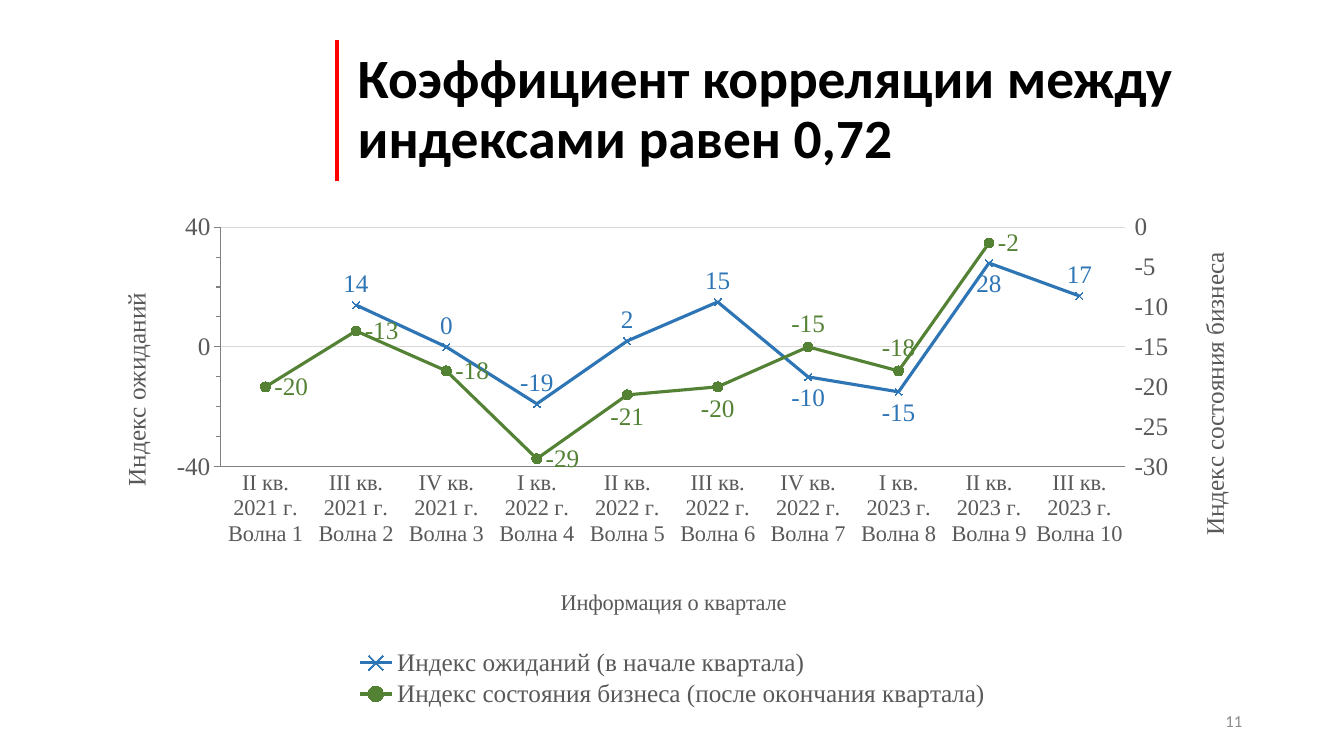
from copy import deepcopy
from pptx import Presentation
from pptx.chart.axis import ValueAxis
from pptx.chart.data import CategoryChartData
from pptx.dml.color import RGBColor as RGB
from pptx.enum.chart import XL_AXIS_CROSSES as Cross, XL_CHART_TYPE as Kind
from pptx.enum.chart import XL_LABEL_POSITION as Pos, XL_LEGEND_POSITION as Side
from pptx.enum.chart import XL_MARKER_STYLE as Mark, XL_TICK_MARK as Tick
from pptx.enum.shapes import MSO_CONNECTOR as Link
from pptx.enum.text import MSO_ANCHOR as Anchor, PP_ALIGN as Align
from pptx.oxml import parse_xml
from pptx.oxml.ns import nsdecls, qn
from pptx.util import Inches, Pt


class Theme:
    sans, serif = "Calibri", "Times New Roman"
    black, red = RGB.from_string("000000"), RGB.from_string("FF0000")
    blue, green = RGB.from_string("2E75B6"), RGB.from_string("548235")
    text, pale = RGB.from_string("595959"), RGB.from_string("8C8C8C")
    axis, grid = RGB.from_string("808080"), RGB.from_string("D9D9D9")
    head, body, small, note = Pt(39.6), Pt(18), Pt(16), Pt(12)


def write(frame, text, font=Theme.serif, size=Theme.body, color=Theme.text,
          bold=False, align=None, space=None):
    para = frame.paragraphs[0]
    para.alignment, para.line_spacing = align, space
    run = para.add_run()
    run.text = text
    run.font.name, run.font.size, run.font.bold = font, size, bold
    run.font.color.rgb = color


def place(node, index, x, y, w=None, h=None, inner=False):
    """Set a manual chart layout, in fractions of the chart."""
    for old in node.findall(qn("c:layout")):
        node.remove(old)
    parts = '<c:layoutTarget val="inner"/>' if inner else ""
    parts += '<c:xMode val="edge"/><c:yMode val="edge"/>'
    for tag, val in zip("xywh", (x, y, w, h)):
        if val is not None:
            parts += f'<c:{tag} val="{val}"/>'
    node.insert(index, parse_xml(
        f'<c:layout {nsdecls("c")}><c:manualLayout>{parts}</c:manualLayout></c:layout>'))


deck = Presentation()
deck.slide_width, deck.slide_height = Inches(13.33), Inches(7.5)
slide = deck.slides.add_slide(deck.slide_layouts[6])
shapes = slide.shapes

# Red rule beside the title
rule = shapes.add_connector(Link.STRAIGHT, Inches(3.34), Inches(0.4), Inches(3.34), Inches(1.8))
rule.line.color.rgb, rule.line.width = Theme.red, Pt(3)
rule._element.spPr.append(parse_xml(f'<a:effectLst {nsdecls("a")}/>'))

# Title and page number
texts = [
    ("Коэффициент корреляции между индексами равен 0,72", (3.45, 0.4, 8.97, 1.4),
     dict(size=Theme.head, color=Theme.black, bold=True, space=0.9)),
    ("11", (9.42, 6.95, 3, 0.4),
     dict(size=Theme.note, color=Theme.pale, align=Align.RIGHT)),
]
for text, area, form in texts:
    frame = shapes.add_textbox(*map(Inches, area)).text_frame
    frame.word_wrap, frame.vertical_anchor = True, Anchor.MIDDLE
    write(frame, text, font=Theme.sans, **form)

# Chart data: ten quarterly waves from the second quarter of 2021
data = CategoryChartData(number_format="0")
roman = ["I", "II", "III", "IV"]
data.categories = [f"{roman[n % 4]} кв.\n{2021 + n // 4} г.\nВолна {n}" for n in range(1, 11)]
data.add_series("Индекс ожиданий (в начале квартала)",
                [None, 14, 0, -19, 2, 15, -10, -15, 28, 17])
data.add_series("Индекс состояния бизнеса (после окончания квартала)",
                [-20, -13, -18, -29, -21, -20, -15, -18, -2, None])
chart = shapes.add_chart(Kind.LINE_MARKERS, Inches(0.92), Inches(2), Inches(11.5),
                         Inches(5.06), data).chart
chart.has_title = False
chart.font.name, chart.font.size, chart.font.color.rgb = Theme.serif, Theme.body, Theme.text

# Lines, markers and labels
looks = [
    (Theme.blue, Mark.X, 5, Pos.ABOVE, {6: Pos.BELOW, 7: Pos.BELOW, 8: Pos.BELOW}),
    (Theme.green, Mark.CIRCLE, 7, Pos.RIGHT,
     {4: Pos.BELOW, 5: Pos.BELOW, 6: Pos.ABOVE, 7: Pos.ABOVE}),
]
for row, (color, mark, size, pos, moved) in zip(chart.plots[0].series, looks):
    row.smooth = False
    row.format.line.color.rgb, row.format.line.width = color, Pt(2.25)
    row.marker.style, row.marker.size = mark, size
    row.marker.format.line.color.rgb = color
    row.marker.format.fill.solid()
    row.marker.format.fill.fore_color.rgb = color
    tags = row.data_labels
    tags.show_value, tags.position = True, pos
    tags.number_format, tags.number_format_is_linked = "0", False
    tips = [row.points[n].data_label for n in moved]
    for tip, spot in zip(tips, moved.values()):
        tip.position = spot
    for label in [tags, *tips]:
        label.font.name, label.font.size = Theme.serif, Theme.body
        label.font.color.rgb = color

# Left and bottom axes
base, left = chart.category_axis, chart.value_axis
for axis, size in ((base, Theme.small), (left, Theme.body)):
    axis.tick_labels.font.name, axis.tick_labels.font.size = Theme.serif, size
    axis.tick_labels.font.color.rgb = Theme.text
    axis.format.line.color.rgb, axis.format.line.width = Theme.axis, Pt(0.75)
base.major_tick_mark = Tick.NONE
left.minimum_scale, left.maximum_scale = -40, 40
left.major_unit, left.minor_unit = 40, 10
left.major_tick_mark = left.minor_tick_mark = Tick.OUTSIDE
left.tick_labels.number_format, left.tick_labels.number_format_is_linked = "General", False
left.crosses = Cross.MINIMUM
left.major_gridlines.format.line.color.rgb = Theme.grid
left.major_gridlines.format.line.width = Pt(0.75)

# Second line plot on its own pair of axes
area = chart._chartSpace.chart.plotArea
first = area.find(qn("c:lineChart"))
second = deepcopy(first)
first.remove(first.findall(qn("c:ser"))[1])
second.remove(second.findall(qn("c:ser"))[0])
first.addnext(second)
twin_base, twin = deepcopy(base._element), deepcopy(left._element)
left._element.addnext(twin)
twin.addnext(twin_base)
for node, key, other in ((twin_base, "5001", "5002"), (twin, "5002", "5001")):
    node.find(qn("c:axId")).set("val", key)
    node.find(qn("c:crossAx")).set("val", other)
for node, key in zip(second.findall(qn("c:axId")), ("5001", "5002")):
    node.set("val", key)
twin_base.find(qn("c:delete")).set("val", "1")
twin.find(qn("c:axPos")).set("val", "r")
twin.find(qn("c:crosses")).set("val", "max")
right = ValueAxis(twin)
right.has_major_gridlines = False
right.minimum_scale, right.maximum_scale, right.major_unit = -30, 0, 5
right.minor_unit, right.minor_tick_mark = None, Tick.NONE
right.format.line.fill.background()

# Axis titles
titles = [
    (base, "Информация о квартале", Theme.small, 0, 0.4, 0.75),
    (left, "Индекс ожиданий", Theme.body, -5400000, 0.02, 0.17),
    (right, "Индекс состояния бизнеса", Theme.body, -5400000, 0.95, 0.09),
]
for axis, text, size, turn, x, y in titles:
    frame = axis.axis_title.text_frame
    write(frame, text, size=size)
    frame._txBody.find(qn("a:bodyPr")).set("rot", str(turn))
    place(axis.axis_title._element, 1, x, y)

# Legend and plot layout
chart.has_legend = True
legend = chart.legend
legend.position, legend.include_in_layout = Side.BOTTOM, False
legend.font.name, legend.font.size = Theme.serif, Theme.body
legend.font.color.rgb = Theme.text
place(legend._element, 1, 0.22, 0.87, 0.56, 0.13)
place(area, 0, 0.11, 0.05, 0.78, 0.47, inner=True)

deck.save("out.pptx")
